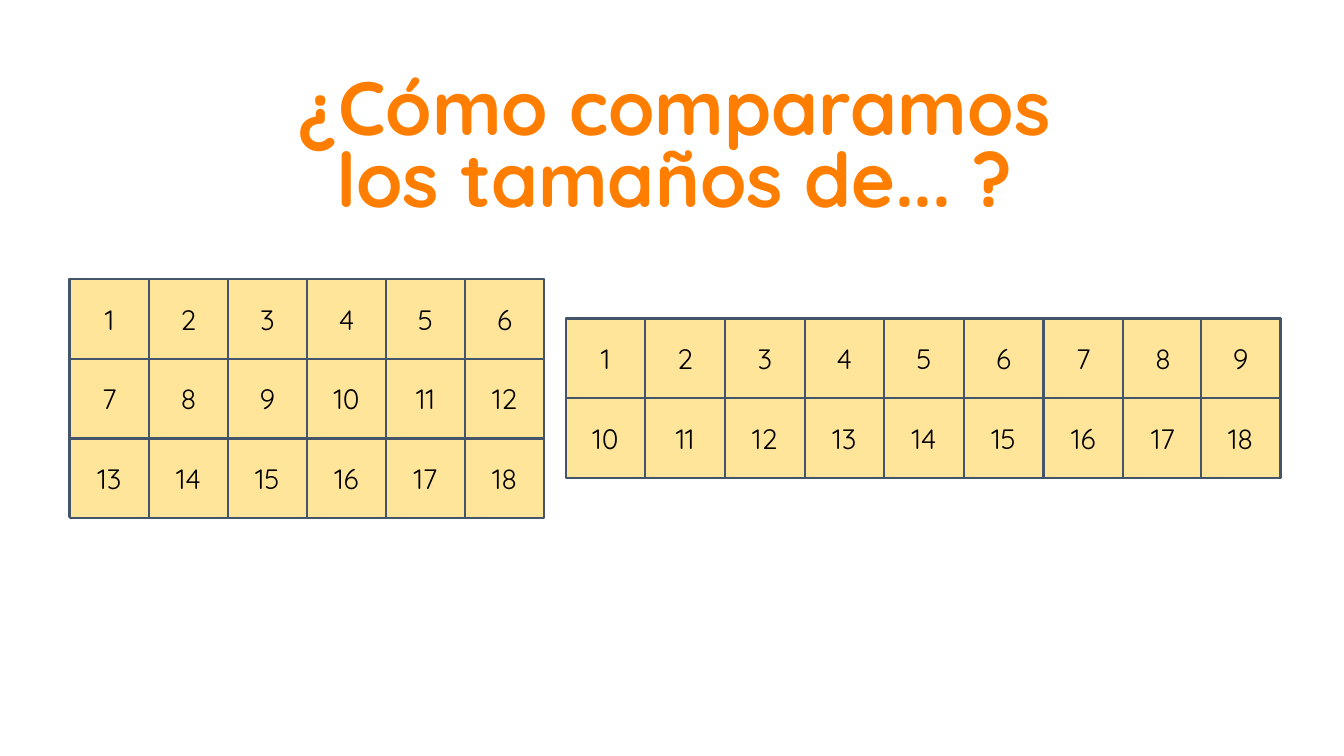
from pptx import Presentation
from pptx.dml.color import RGBColor
from pptx.enum.shapes import MSO_SHAPE as Shape
from pptx.enum.text import MSO_ANCHOR as Anchor, MSO_AUTO_SIZE as AutoSize, PP_ALIGN as Align
from pptx.util import Inches, Pt

COLORS = {"title": "FF7E00", "cell": "FFE599", "line": "44546A", "text": "000000",
          "left": "E06666", "right": "93C47D"}
FONT = "Quicksand"
CELL = 0.79


def color(name):
    return RGBColor.from_string(COLORS[name])


def place(shape, box):
    for side, length in zip(("left", "top", "width", "height"), box):
        setattr(shape, side, Inches(length))


def write(shape, text, tone, margins, font_format, spacing=None):
    frame = shape.text_frame
    frame_format = {"word_wrap": True, "auto_size": AutoSize.NONE, "vertical_anchor": Anchor.MIDDLE}
    for name, value in frame_format.items():
        setattr(frame, name, value)
    for side, length in zip(("left", "top", "right", "bottom"), margins):
        setattr(frame, f"margin_{side}", Inches(length))
    para = frame.paragraphs[0]
    para.alignment = Align.CENTER
    para.line_spacing = spacing
    span = para.add_run()
    span.text = text
    for name, value in {"name": FONT, **font_format}.items():
        setattr(span.font, name, value)
    span.font.color.rgb = color(tone)


def add_title(page, box):
    title = page.shapes.title
    place(title, box)
    write(title, "¿Cómo comparamos los tamaños de... ?", "title",
          (0.1, 0.05, 0.1, 0.05), {"size": Pt(54), "bold": True}, spacing=0.8)


def add_rectangle(page, box, fill):
    rectangle = page.shapes.add_shape(Shape.RECTANGLE, *map(Inches, box))
    rectangle.shadow.inherit = False
    rectangle.fill.solid()
    rectangle.fill.fore_color.rgb = color(fill)
    rectangle.line.color.rgb = color("line")
    rectangle.line.width = Pt(1.5)
    return rectangle


def add_grid(page, box, fill, rows, columns, step, inset=0):
    """Numbered squares in a frame; the last column is flush with its right edge."""
    left, top, width, height = box
    add_rectangle(page, box, fill)
    last = left + width - CELL
    for index in range(rows * columns):
        row, column = divmod(index, columns)
        cell_box = (min(left + inset + column * step, last), top + row * CELL, CELL, CELL)
        cell = add_rectangle(page, cell_box, "cell")
        write(cell, str(index + 1), "text", (0.1,) * 4, {"size": Pt(20)})


def main():
    deck = Presentation()
    deck.slide_width, deck.slide_height = Inches(13.33), Inches(7.5)
    page = deck.slides.add_slide(deck.slide_layouts[5])

    # Heading
    add_title(page, (2.39, 0.66, 8.6, 1.65))

    # The two rectangles to compare, 18 squares each
    add_grid(page, (0.68, 2.77, 4.72, 2.36), "left", rows=3, columns=6, step=3.92 / 5, inset=0.01)
    add_grid(page, (5.61, 3.16, 7.09, 1.57), "right", rows=2, columns=9, step=CELL)

    deck.save("out.pptx")


if __name__ == "__main__":
    main()
